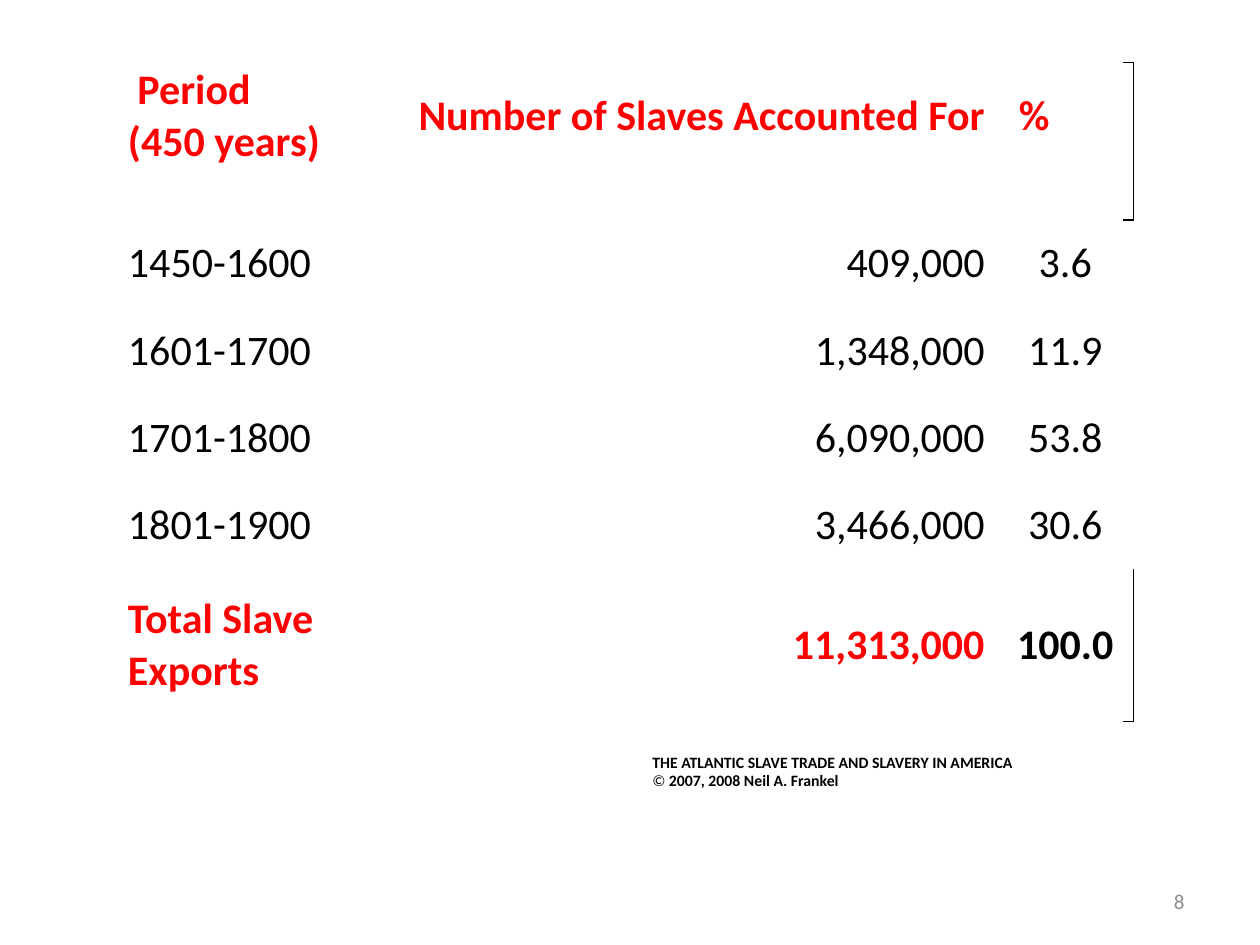
"""Build a slide with a table of slave exports by period."""
from lxml import etree
from pptx import Presentation
from pptx.dml.color import RGBColor
from pptx.enum.text import MSO_ANCHOR, PP_ALIGN
from pptx.oxml.ns import qn
from pptx.util import Cm, Pt

LEFT, CENTER, RIGHT = PP_ALIGN.LEFT, PP_ALIGN.CENTER, PP_ALIGN.RIGHT
MIDDLE = MSO_ANCHOR.MIDDLE
FONT = "Calibri"
NO_STYLE = "{2D5ABB26-0587-4C30-8999-92F81FD0307C}"
COLORS = {"white": "FFFFFF", "black": "000000", "red": "FF0000", "grey": "8C8C8C"}

HEADER = (" Period\n(450 years)", "Number of Slaves Accounted For", " %")
PERIODS = [
    ("1450-1600", "409,000", "3.6"),
    ("1601-1700", "1,348,000", "11.9"),
    ("1701-1800", "6,090,000", "53.8"),
    ("1801-1900", "3,466,000", "30.6"),
]
TOTAL = ("Total Slave Exports", "11,313,000", "100.0")
CREDIT_START = "THE ATLANTIC SLAVE TRADE AND SLAVERY IN AMERICA\n©"
CREDIT_END = " 2007, 2008 Neil A. Frankel"
SLIDE_NUMBER = "8"

GAP = 0.21
COLUMN_WIDTHS = [GAP, 5.29, 2 * GAP, 11.64, GAP, GAP, 2.33, GAP]
TEXT_COLUMNS = (1, 3, 6)
ALIGNMENTS = (LEFT, RIGHT, CENTER)
ROW_HEIGHTS = [3.17] + [1.76] * len(PERIODS) + [3.07]
LINE_HEIGHT = 1.03
BRACKETS = {0: ("lnR", "lnT", "lnB"), len(PERIODS) + 1: ("lnR", "lnB")}


def style(run, size, color, bold=False):
    run.font.name = FONT
    run.font.size = Pt(size)
    run.font.bold = bold
    run.font.color.rgb = RGBColor.from_string(COLORS[color])


def add_borders(cell, sides):
    properties = cell._tc.get_or_add_tcPr()
    for position, side in enumerate(sides):
        line = etree.Element(qn("a:" + side), w=str(Pt(1)))
        fill = etree.SubElement(line, qn("a:solidFill"))
        etree.SubElement(fill, qn("a:srgbClr"), val=COLORS["black"])
        properties.insert(position, line)


def fill_cell(cell, text, alignment, color, bold):
    cell.vertical_anchor = MIDDLE
    paragraph = cell.text_frame.paragraphs[0]
    paragraph.text = text
    paragraph.alignment = alignment
    for run in paragraph.runs:
        style(run, 24, color, bold)


def add_export_table(slide):
    rows = [HEADER, *PERIODS, TOTAL]
    last_row, last_column = len(rows) - 1, len(COLUMN_WIDTHS) - 1
    table = slide.shapes.add_table(
        len(rows), len(COLUMN_WIDTHS), Cm(2.33), Cm(1.26),
        Cm(sum(COLUMN_WIDTHS)), Cm(sum(ROW_HEIGHTS))).table
    table.first_row = table.horz_banding = False
    table._tbl.tblPr.find(qn("a:tableStyleId")).text = NO_STYLE
    for column, width in zip(table.columns, COLUMN_WIDTHS):
        column.width = Cm(width)
    for row, height in zip(table.rows, ROW_HEIGHTS):
        row.height = Cm(height)

    for cell in table.iter_cells():
        cell.margin_left = cell.margin_right = Cm(0.04)
        cell.margin_top = cell.margin_bottom = Cm(0.03)
        cell.fill.solid()
        cell.fill.fore_color.rgb = RGBColor.from_string(COLORS["white"])

    for index, texts in enumerate(rows):
        emphasized = index in (0, last_row)
        for column, text, alignment in zip(TEXT_COLUMNS, texts, ALIGNMENTS):
            cell = table.cell(index, column)
            total_share = index == last_row and column == TEXT_COLUMNS[-1]
            color = "red" if emphasized and not total_share else "black"
            if index == 0:
                cell.margin_bottom = Cm(LINE_HEIGHT)
                alignment = RIGHT if alignment == RIGHT else LEFT
            fill_cell(cell, text, alignment, color, emphasized)

    for index, sides in BRACKETS.items():
        bracket = table.cell(index, last_column)
        bracket.fill.background()
        add_borders(bracket, sides)


def add_credit(slide):
    frame = slide.shapes.add_textbox(Cm(12.9), Cm(15.04), Cm(9.96), Cm(1.8)).text_frame
    frame.word_wrap = True
    paragraph = frame.paragraphs[0]
    paragraph.text = CREDIT_START
    paragraph.add_run().text = CREDIT_END
    for run in paragraph.runs:
        style(run, 9, "black", run.text != "©")


def add_slide_number(slide):
    frame = slide.shapes.add_textbox(Cm(18.21), Cm(17.65), Cm(5.92), Cm(1.02)).text_frame
    frame.word_wrap = True
    frame.vertical_anchor = MIDDLE
    paragraph = frame.paragraphs[0]
    paragraph.text = SLIDE_NUMBER
    paragraph.alignment = RIGHT
    style(paragraph.runs[0], 12, "grey")


def main():
    presentation = Presentation()
    presentation.slide_width, presentation.slide_height = Cm(25.4), Cm(19.05)
    slide = presentation.slides.add_slide(presentation.slide_layouts[6])
    add_slide_number(slide)
    add_export_table(slide)
    add_credit(slide)
    presentation.save("out.pptx")


if __name__ == "__main__":
    main()
